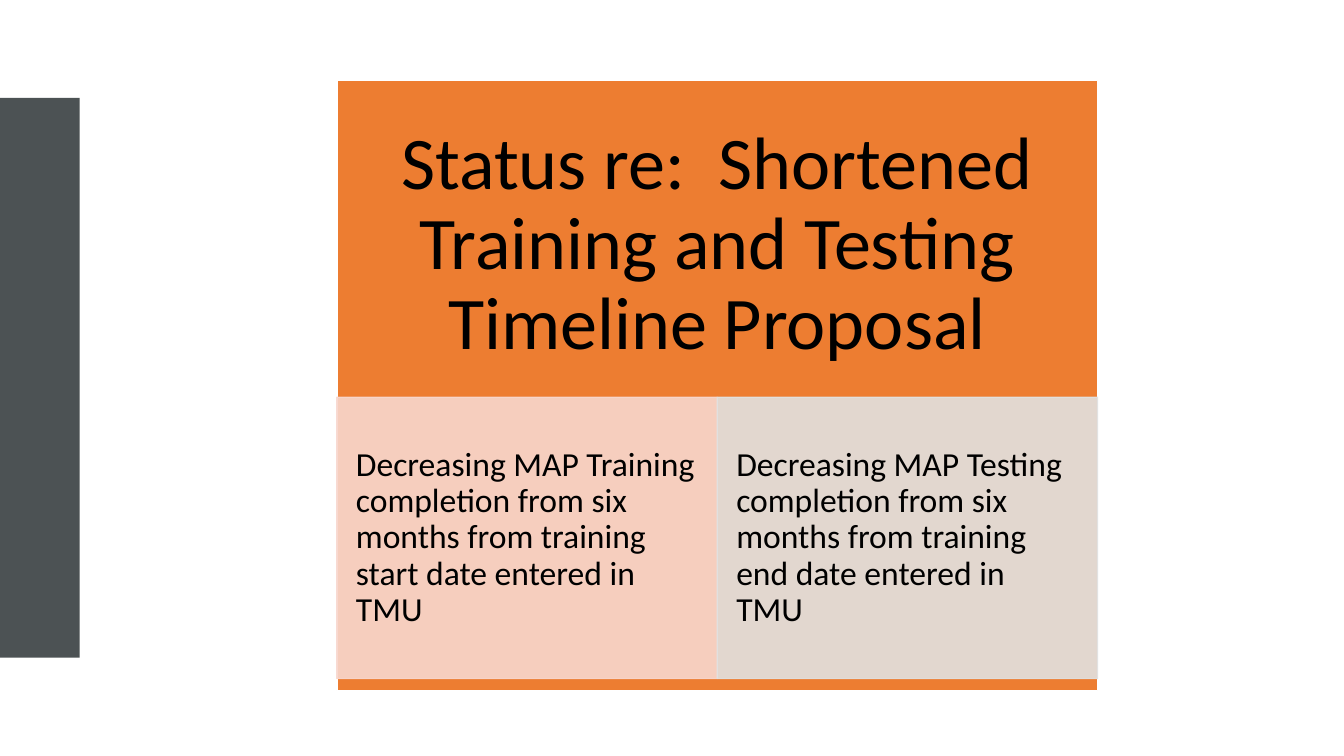
import pptx
import pptx.dml.color
import pptx.enum.shapes
import pptx.enum.text
import pptx.oxml
import pptx.oxml.ns
import pptx.util
from pptx.util import Cm

COLUMNS = [
    ("Decreasing MAP Training completion from six months from training start date entered in TMU", "F8D7CE"),
    ("Decreasing MAP Testing completion from six months from training end date entered in TMU", "E1E1E1"),
]


def paint(color_format, color, opacity=100):
    color_format.rgb = pptx.dml.color.RGBColor.from_string(color)
    if opacity < 100:
        for clr in color_format._xFill.iter(pptx.oxml.ns.qn("a:srgbClr")):
            alpha = clr.makeelement(pptx.oxml.ns.qn("a:alpha"), {"val": str(opacity * 1000)})
            clr.append(alpha)


def add_rect(s, left, top, width, height, color, line=None, opacity=100):
    sp = s.shapes.add_shape(pptx.enum.shapes.MSO_SHAPE.RECTANGLE, left, top, width, height)
    sp.shadow.inherit = False
    sp.fill.solid()
    paint(sp.fill.fore_color, color)
    if line:
        sp.line.width = pptx.util.Pt(1)
        sp.line.fill.solid()
        paint(sp.line.fill.fore_color, line)
    else:
        sp.line.fill.background()
    if opacity < 100:
        for clr in sp.fill._xPr.iter(pptx.oxml.ns.qn("a:srgbClr")):
            clr.append(clr.makeelement(pptx.oxml.ns.qn("a:alpha"), {"val": str(opacity * 1000)}))
    return sp


def write_text(sp, text, size, align, inset_x, inset_y):
    tf = sp.text_frame
    tf.word_wrap = True
    tf.vertical_anchor = pptx.enum.text.MSO_ANCHOR.MIDDLE
    tf.margin_left = tf.margin_right = inset_x
    tf.margin_top = tf.margin_bottom = inset_y
    p = tf.paragraphs[0]
    p.text = text
    p.alignment = align
    p.line_spacing = 0.9
    p.font.name = "Calibri"
    p.font.size = pptx.util.Pt(size)
    p.font.color.rgb = pptx.dml.color.RGBColor.from_string("000000")


def add_proposal_card(s, left, top, width, height):
    """Orange card with a title above two tinted columns."""
    align = pptx.enum.text.PP_ALIGN
    add_rect(s, left, top, width, height, "ED7D31", "FFFFFF")
    title = s.shapes.add_textbox(left, top, width, Cm(8.3))
    write_text(title, "Status re:  Shortened Training and Testing Timeline Proposal",
               53, align.CENTER, Cm(1.04), Cm(1.04))
    column_width = width // len(COLUMNS)
    for i, (text, color) in enumerate(COLUMNS):
        column = add_rect(s, left + i * column_width, top + Cm(7.98), column_width, Cm(7.09),
                          color, color, opacity=90)
        write_text(column, text, 24, align.LEFT, Cm(0.48), Cm(0.08))


def main():
    prs = pptx.Presentation()
    prs.slide_width, prs.slide_height = Cm(33.87), Cm(19.05)
    s = prs.slides.add_slide(prs.slide_layouts[6])
    add_rect(s, 0, Cm(2.47), Cm(2.01), Cm(14.1), "4C5254")
    add_proposal_card(s, Cm(8.49), Cm(2.03), Cm(19.17), Cm(15.37))
    prs.save("out.pptx")


if __name__ == "__main__":
    main()
